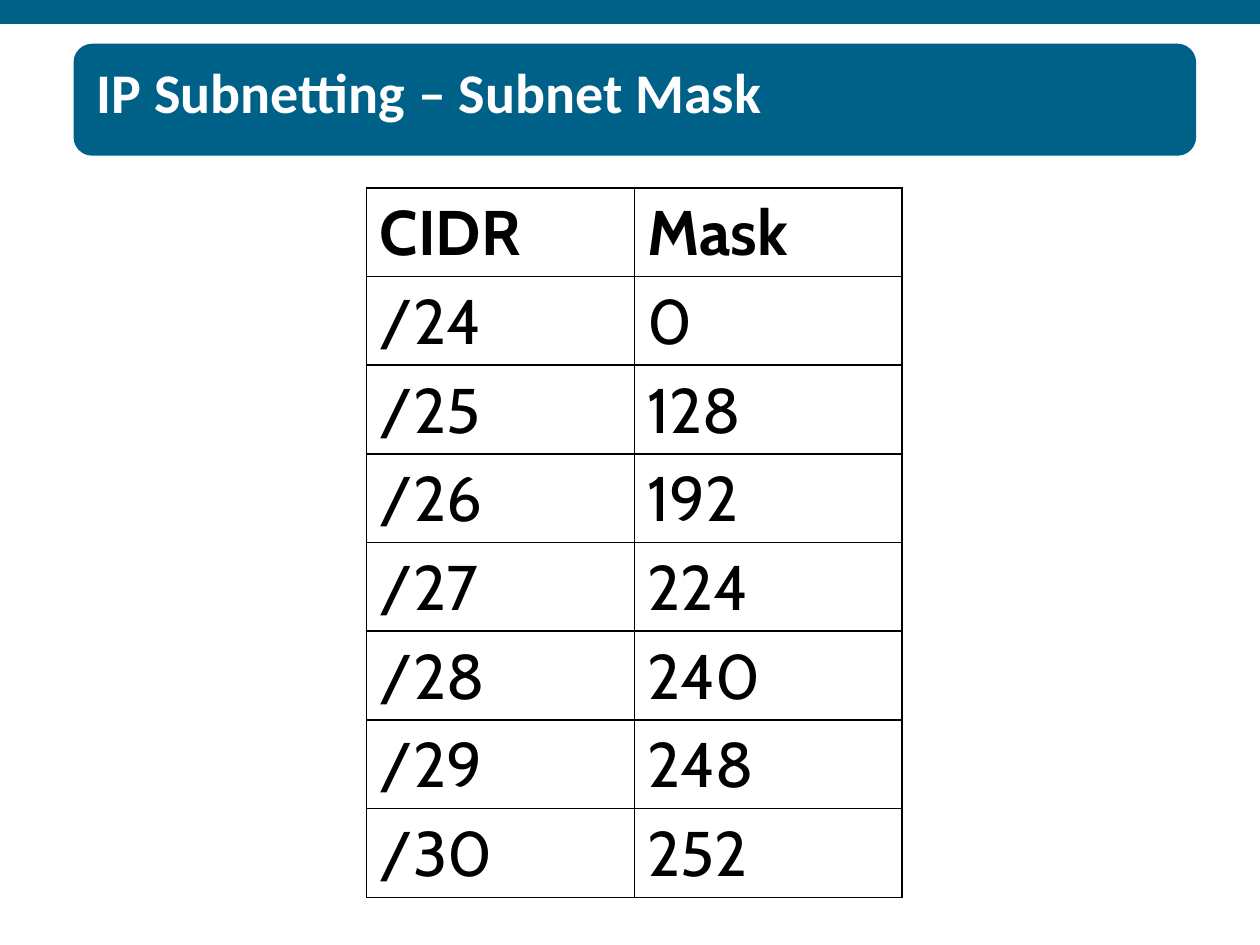
from dataclasses import dataclass

from lxml.etree import SubElement
from pptx import Presentation
from pptx.dml.color import RGBColor
from pptx.enum.shapes import MSO_SHAPE
from pptx.oxml.ns import qn
from pptx.util import Pt


@dataclass(frozen=True)
class Theme:
    band: RGBColor = RGBColor(0x00, 0x5F, 0x85)
    banner: RGBColor = RGBColor(0x00, 0x61, 0x88)
    white: RGBColor = RGBColor(0xFF, 0xFF, 0xFF)
    black: RGBColor = RGBColor(0x00, 0x00, 0x00)
    title_font: str = "Calibri"
    table_font: str = "Cabin"
    title_size: float = 32
    table_size: float = 36
    border: float = 1


@dataclass(frozen=True)
class Box:
    left: float
    top: float
    width: float
    height: float

    def emu(self) -> tuple:
        return Pt(self.left), Pt(self.top), Pt(self.width), Pt(self.height)


@dataclass(frozen=True)
class MaskRow:
    cidr: str
    mask: str
    bold: bool = False


THEME = Theme()
HEADER = MaskRow("CIDR", "Mask", bold=True)
# Each further prefix bit halves the block size
ROWS = [HEADER] + [MaskRow(f"/{n}", str(256 - 2 ** (32 - n))) for n in range(24, 31)]


def add_panel(s, kind: MSO_SHAPE, box: Box, color: RGBColor) -> None:
    sp = s.shapes.add_shape(kind, *box.emu())
    sp.shadow.inherit = False
    sp.fill.solid()
    sp.fill.fore_color.rgb = color
    sp.line.fill.background()


def write(tf, text: str, color: RGBColor, before: float, **font) -> None:
    p = tf.paragraphs[0]
    p.space_before = Pt(before)
    r = p.add_run()
    r.text = text
    for name, value in font.items():
        setattr(r.font, name, value)
    r.font.color.rgb = color


def set_margins(target, left: float, top: float) -> None:
    margins = {"left": left, "top": top, "right": 0, "bottom": 0}
    for side, value in margins.items():
        setattr(target, f"margin_{side}", Pt(value))


def add_borders(cell) -> None:
    tc_pr = cell._tc.get_or_add_tcPr()
    for side in ("lnL", "lnR", "lnT", "lnB"):
        ln = SubElement(tc_pr, qn(f"a:{side}"), w=str(Pt(THEME.border)))
        fill = SubElement(ln, qn("a:solidFill"))
        SubElement(fill, qn("a:srgbClr"), val=str(THEME.black))


def add_mask_table(s, box: Box, rows: list[MaskRow]) -> None:
    table = s.shapes.add_table(len(rows), 2, *box.emu()).table
    table.first_row = table.horz_banding = False
    for i, row in enumerate(rows):
        table.rows[i].height = Pt(box.height / len(rows))
        for j, text in enumerate((row.cidr, row.mask)):
            cell = table.cell(i, j)
            add_borders(cell)
            cell.fill.background()
            set_margins(cell, 7.5, 4)
            write(cell.text_frame, text, THEME.black, before=4,
                  name=THEME.table_font, size=Pt(THEME.table_size), bold=row.bold)


def main() -> None:
    prs = Presentation()
    prs.slide_width, prs.slide_height = Pt(720), Pt(540)
    s = prs.slides.add_slide(prs.slide_layouts[6])

    # Top band
    add_panel(s, MSO_SHAPE.RECTANGLE, Box(0, 0, 720, 13.7), THEME.band)

    # Subnet mask table
    add_mask_table(s, Box(209.5, 107.3, 306, 405.6), ROWS)

    # Title banner
    add_panel(s, MSO_SHAPE.ROUNDED_RECTANGLE, Box(42, 25, 641.5, 64), THEME.banner)
    tf = s.shapes.add_textbox(*Box(54.7, 32.4, 430, 45.4).emu()).text_frame
    tf.word_wrap = True
    set_margins(tf, 0.7, 0.7)
    write(tf, "IP Subnetting – Subnet Mask", THEME.white, before=1,
          name=THEME.title_font, size=Pt(THEME.title_size), bold=True)

    prs.save("out.pptx")


if __name__ == "__main__":
    main()
